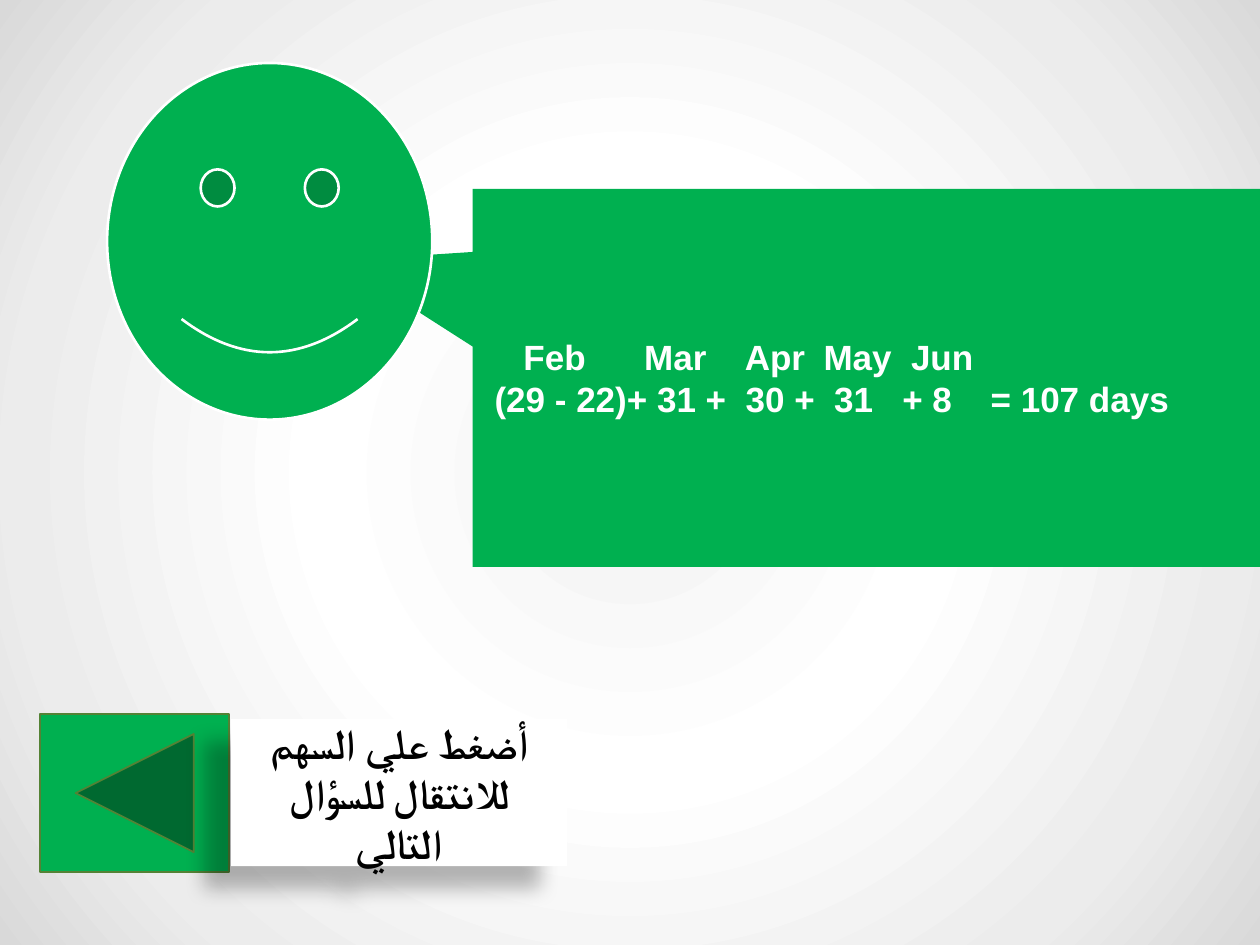
"""Build a quiz answer slide with a speaking face and a next-question button."""
import pptx
import pptx.dml.color
import pptx.enum.shapes
import pptx.enum.text
import pptx.oxml
import pptx.oxml.ns
import pptx.util

Pt = pptx.util.Pt
RGB = pptx.dml.color.RGBColor
SHAPE = pptx.enum.shapes.MSO_SHAPE
ALIGN = pptx.enum.text.PP_ALIGN
NS = pptx.oxml.ns.nsdecls("a")

GREEN = RGB(0x00, 0xB0, 0x50)
DARK_GREEN = RGB(0x54, 0x82, 0x35)
WHITE = RGB(0xFF, 0xFF, 0xFF)
BLACK = RGB(0x00, 0x00, 0x00)
BACKGROUND = [(0, "F2F2F2"), (39, "FFFFFF"), (78, "ECECEC"), (100, "D9D9D9")]

MONTHS = "\tFeb\tMar\tApr\tMay\tJun"
MONTH_STOPS = [22, 91, 148.5, 193.5, 243.5]
DAYS = "\t(29 - 22)+ 31 +\t30 +\t31\t+ 8\t= 107 days"
DAY_STOPS = [5.5, 149, 199.5, 238.5, 289]
PROMPT = "أضغط علي السهم للانتقال للسؤال التالي"


def write(p, text, font="Arial", size=20, color=WHITE, align=ALIGN.LEFT, stops=(), rtl=False):
    r = p.add_run()
    r.text = text
    r.font.name, r.font.size, r.font.bold = font, Pt(size), True
    r.font.color.rgb = color
    p.alignment = align
    pPr = p._p.get_or_add_pPr()
    if stops:
        tabs = "".join(f'<a:tab pos="{Pt(x)}" algn="l"/>' for x in stops)
        pPr.append(pptx.oxml.parse_xml(f"<a:tabLst {NS}>{tabs}</a:tabLst>"))
    if rtl:
        pPr.set("rtl", "1")
        r._r.rPr.append(pptx.oxml.parse_xml(f'<a:cs {NS} typeface="{font}"/>'))


class Deck:
    def __init__(self):
        self.prs = pptx.Presentation()
        self.prs.slide_width, self.prs.slide_height = Pt(720), Pt(540)
        self.s = self.prs.slides.add_slide(self.prs.slide_layouts[6])

    def background(self, stops):
        fill = self.s.background.fill
        fill.gradient()
        gs = "".join(f'<a:gs pos="{pos * 1000}"><a:srgbClr val="{c}"/></a:gs>' for pos, c in stops)
        grad = pptx.oxml.parse_xml(
            f'<a:gradFill {NS} rotWithShape="1"><a:gsLst>{gs}</a:gsLst><a:path path="circle">'
            '<a:fillToRect l="50000" t="50000" r="50000" b="50000"/></a:path></a:gradFill>')
        bgPr = self.s.background._cSld.bg.bgPr
        bgPr.replace(bgPr.find(pptx.oxml.ns.qn("a:gradFill")), grad)

    def shape(self, kind, box, fill=GREEN, line=None, width=1, adjust=()):
        sp = self.s.shapes.add_shape(kind, *map(Pt, box))
        sp.shadow.inherit = False
        sp.fill.solid()
        sp.fill.fore_color.rgb = fill
        if line is None:
            sp.line.fill.background()
        else:
            sp.line.color.rgb, sp.line.width = line, Pt(width)
        for i, value in enumerate(adjust):
            sp.adjustments[i] = value
        sp.text_frame.word_wrap = True
        sp.text_frame.vertical_anchor = pptx.enum.text.MSO_ANCHOR.MIDDLE
        return sp

    def shadow(self, sp, blur, dist, angle, alpha):
        effects = sp._element.spPr.find(pptx.oxml.ns.qn("a:effectLst"))
        effects.append(pptx.oxml.parse_xml(
            f'<a:outerShdw {NS} blurRad="{Pt(blur)}" dist="{Pt(dist)}" dir="{angle * 60000}" '
            f'algn="ctr" rotWithShape="0"><a:srgbClr val="{BLACK}">'
            f'<a:alpha val="{alpha * 1000}"/></a:srgbClr></a:outerShdw>'))


def main():
    deck = Deck()
    deck.background(BACKGROUND)

    callout = deck.shape(SHAPE.RECTANGULAR_CALLOUT, (270, 108, 450, 216), adjust=(-0.67, -0.31))
    tf = callout.text_frame
    write(tf.paragraphs[0], MONTHS, stops=MONTH_STOPS)
    write(tf.add_paragraph(), DAYS, stops=DAY_STOPS)

    deck.shape(SHAPE.SMILEY_FACE, (61.2, 36, 185.8, 203.8), line=WHITE, width=1.5)
    deck.shape(SHAPE.ACTION_BUTTON_BACK_OR_PREVIOUS, (23, 408.2, 108, 90), line=DARK_GREEN)

    prompt = deck.shape(SHAPE.RECTANGLE, (132, 411, 192, 84), fill=WHITE)
    deck.shadow(prompt, blur=11.8, dist=19.7, angle=141, alpha=28)
    write(prompt.text_frame.paragraphs[0], PROMPT, font="Calibri", size=24, color=BLACK,
          align=ALIGN.CENTER, rtl=True)

    deck.prs.save("out.pptx")


if __name__ == "__main__":
    main()
